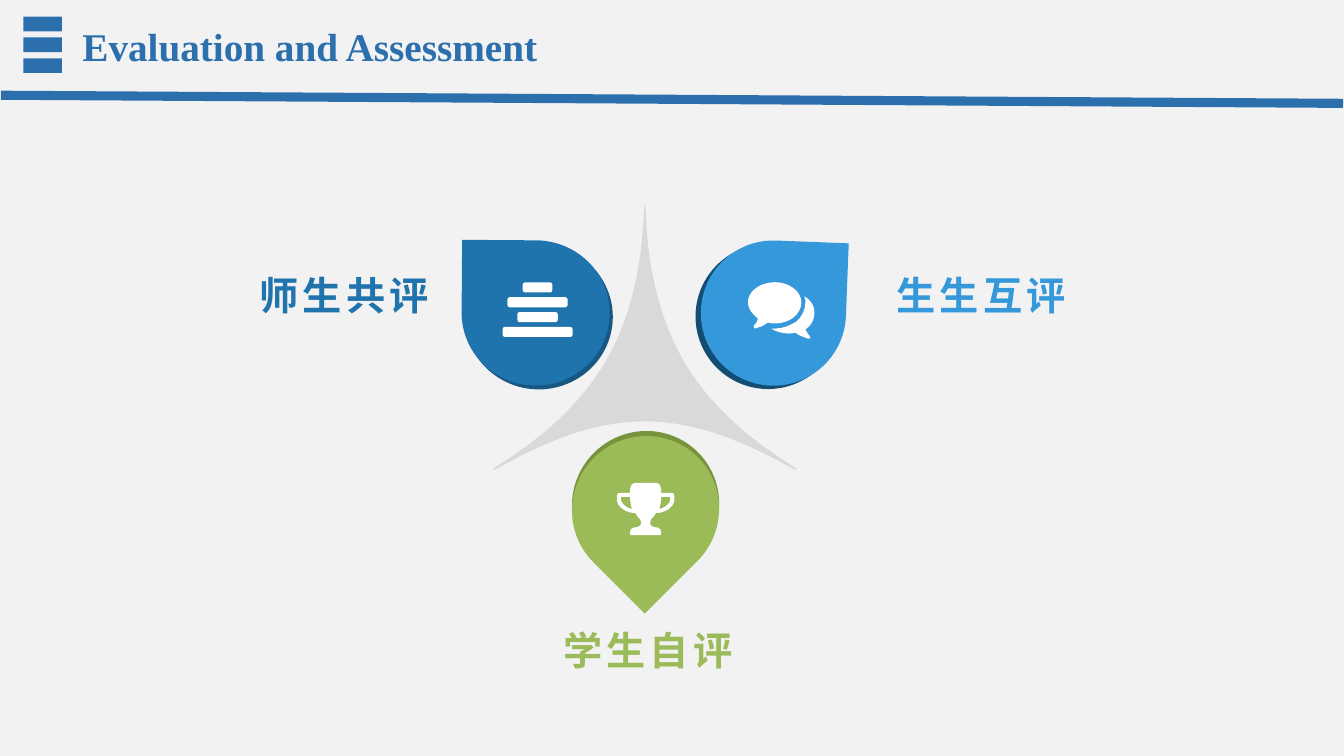
"""Build the "Evaluation and Assessment" slide with three teardrop markers."""
from dataclasses import dataclass

from lxml.etree import SubElement
from pptx import Presentation
from pptx.dml.color import RGBColor
from pptx.enum.shapes import MSO_SHAPE as Shp
from pptx.enum.text import MSO_ANCHOR as Anchor, MSO_AUTO_SIZE as AutoSize, PP_ALIGN as Align
from pptx.oxml.ns import qn
from pptx.util import Pt

Contour = list[tuple[float, ...]]
Box = tuple[float, float, float, float]


@dataclass(frozen=True)
class Theme:
    background: str = "F2F2F2"
    header: str = "2C6FAD"
    star: str = "D9D9D9"
    icon: str = "FFFFFF"
    title_font: str = "Times New Roman"
    label_font: str = "Arial"
    size: float = 28
    spacing: float = 3


@dataclass(frozen=True)
class Marker:
    text: str
    color: str
    shade: str
    size: tuple[float, float]
    front: tuple[float, float]
    back: tuple[float, float]
    rotation: float
    label: Box
    align: Align
    icon: list[Contour]


THEME = Theme()


def mirror(segs: Contour, axis: float) -> Contour:
    """Mirror points (2 numbers) and cubics (6 numbers) in reverse order."""
    out = [segs[-1][-2:]]
    for prev, seg in reversed(list(zip(segs, segs[1:]))):
        out.append(seg[2:4] + seg[:2] + prev[-2:] if len(seg) == 6 else prev[-2:])
    return [tuple(v if i % 2 else 2 * axis - v for i, v in enumerate(seg)) for seg in out]


def symmetric(right_half: Contour, axis: float) -> Contour:
    """Complete a right half with its mirror image."""
    return right_half + mirror(right_half, axis)[1:]


def rounded_bar(cx: float, y: float, w: float, h: float = 7.2, r: float = 1.6) -> Contour:
    """Outline a centred bar with rounded corners."""
    x, b = cx + w / 2, y + h
    half = [(x - r, y), (x - r / 2, y, x, y + r / 2, x, y + r),
            (x, b - r), (x, b - r / 2, x - r / 2, b, x - r, b)]
    return half + [(2 * cx - x + r, b)] + mirror(half, cx)[1:]


STAR = [symmetric([
    (460.7, 146.2), (461.3, 150.5),
    (462.2, 179.3, 467.2, 221.8, 488.8, 258.5),
    (510.4, 295.2, 543.6, 319, 568.1, 334.1),
    (569.2, 335.5), (567.5, 335.5),
    (541.4, 320.8, 503.1, 301, 460.6, 301)], 460.6)]

STACK_ICON = [rounded_bar(384, 201.7 + 10.6 * i, w)
              for i, w in enumerate((21.2, 43, 29, 50))]

CHAT_ICON = [
    [(553.7, 231.1), (551.5, 231.1, 550.1, 230.8, 548.6, 230.4),
     (546.5, 231.8, 544.3, 233.3, 541.4, 234), (540, 234.3, 540, 234.7, 539.3, 234.7),
     (538.6, 234.7, 538.6, 234, 538.6, 234), (537.8, 233.3, 538.6, 232.6, 538.6, 232.6),
     (540, 231.1, 540.7, 230.4, 541.4, 227.5), (537.8, 224.6, 534.2, 221, 534.2, 216),
     (534.2, 208.1, 542.9, 201.6, 553.7, 201.6), (563.8, 201.6, 572.4, 208.1, 572.4, 216),
     (572.4, 224.6, 563.8, 231.1, 553.7, 231.1)],
    [(575.3, 235.4), (576, 237.6, 577.4, 238.3, 578.2, 239.8),
     (578.9, 240.5, 578.9, 240.5, 578.9, 241.2), (578.9, 241.9, 578.9, 241.9, 578.2, 241.9),
     (577.4, 241.9, 576, 241.9, 575.3, 241.2), (573.1, 240.5, 571, 239.8, 568.1, 237.6),
     (566.6, 238, 565.2, 238.3, 563.8, 238.3), (558.7, 238.3, 554.4, 236.9, 550.8, 234.7),
     (551.5, 234.7, 553, 234.7, 553.7, 234.7), (558.7, 234.7, 564.5, 232.6, 568.8, 229.7),
     (573.1, 226.1, 575.3, 221, 575.3, 216), (575.3, 214.6, 575.3, 213.1, 574.6, 211.7),
     (579.6, 214.6, 581.8, 218.9, 581.8, 223.2), (581.8, 228.2, 579.6, 232.6, 575.3, 235.4)]]

CUP_AXIS = 461.2
CUP_HANDLE = [
    (478.8, 355), (472.3, 355), (472.3, 358.6, 471.6, 361.4, 470.9, 363.6),
    (475.2, 362.9, 478.8, 359.3, 478.8, 357.1)]
CUP_ICON = [symmetric([
    (461.2, 344.9), (468, 344.9), (470.9, 344.9, 472.3, 347, 472.3, 349.2), (472.3, 352),
    (478.8, 352), (481, 352, 481.7, 352.2, 481.7, 354.2), (481.7, 357.1),
    (481.7, 361.4, 475.9, 366.5, 468.7, 366.5), (467.3, 367.9, 466.6, 369.4, 466.6, 369.4),
    (465.1, 370.1, 464.4, 371.5, 464.4, 373.7), (464.4, 374.4, 465.1, 376.6, 467.3, 376.6),
    (470.2, 376.6, 472.3, 377.3, 472.3, 380.2), (472.3, 381.6),
    (472.3, 382.3, 471.6, 382.3, 471.6, 382.3), (461.2, 382.3)], CUP_AXIS),
    CUP_HANDLE, mirror(CUP_HANDLE, CUP_AXIS)]

MARKERS = [
    Marker("师生共评", "1F74AD", "175782", (103.7, 105.8), (330.8, 170.6), (333, 173.4),
           270.4, (76.3, 196.2, 236.9, 31), Align.RIGHT, STACK_ICON),
    Marker("生生互评", "3498DB", "144D73", (103.7, 103.7), (500.6, 171.8), (496.8, 174.2),
           2.2, (633.2, 196.2, 141.1, 31), Align.LEFT, CHAT_ICON),
    Marker("学生自评", "9BBB59", "77933C", (105.8, 104.4), (408.2, 311.8), (408.2, 308.2),
           135.1, (395.3, 450, 159.8, 31), Align.LEFT, CUP_ICON)]


def paint(sp, color: str) -> None:
    """Give a shape a flat fill with no line or shadow."""
    sp.shadow.inherit = False
    sp.fill.solid()
    sp.fill.fore_color.rgb = RGBColor.from_string(color)
    sp.line.fill.background()


def add_preset(s, kind: Shp, box: Box, color: str, rotation: float = 0) -> None:
    """Draw a flat preset shape."""
    sp = s.shapes.add_shape(kind, *map(Pt, box))
    sp.rotation = rotation
    paint(sp, color)


def add_outline(s, contours: list[Contour], color: str) -> None:
    """Draw closed contours as one freeform, bending the cubic segments."""
    scaled = [[tuple(map(Pt, seg)) for seg in segs] for segs in contours]
    fb = s.shapes.build_freeform(*scaled[0][0])
    for i, segs in enumerate(scaled):
        if i:
            fb.move_to(*segs[0])
        fb.add_line_segments([seg[-2:] for seg in segs[1:]], close=True)
    sp = fb.convert_to_shape()
    lines = list(sp._element.iter(qn("a:lnTo")))
    for line, seg in zip(lines, (seg for segs in scaled for seg in segs[1:])):
        if len(seg) == 6:
            curve = SubElement(line.getparent(), qn("a:cubicBezTo"))
            for x, y in zip(seg[::2], seg[1::2]):
                SubElement(curve, qn("a:pt"), x=str(x - sp.left), y=str(y - sp.top))
            line.getparent().replace(line, curve)
    paint(sp, color)


def write(sp, text: str, font: str, color: str, insets: Box, anchor: Anchor, align: Align):
    """Set one bold line of text and return its paragraph."""
    tf = sp.text_frame
    tf.text = text
    tf.word_wrap, tf.auto_size, tf.vertical_anchor = True, AutoSize.NONE, anchor
    tf.margin_left, tf.margin_top, tf.margin_right, tf.margin_bottom = map(Pt, insets)
    p = tf.paragraphs[0]
    p.alignment = align
    f = p.runs[0].font
    f.name, f.size, f.bold = font, Pt(THEME.size), True
    f.color.rgb = RGBColor.from_string(color)
    return p


def add_header(s) -> None:
    """Draw the slanted band, the three bars and the title."""
    add_outline(s, [[(0.7, 64.8), (959.5, 70.6), (959.3, 77.1), (0.7, 71.3)]], THEME.header)
    for i in range(3):
        add_preset(s, Shp.RECTANGLE, (16.8, 11.9 + 14.9 * i, 27.5, 10.5), THEME.header)
    sp = s.shapes.title
    sp.left, sp.top, sp.width, sp.height = map(Pt, (51.1, 14.4, 428.4, 34.6))
    p = write(sp, "Evaluation and Assessment", THEME.title_font, THEME.header,
              (7.8, 1.4, 0, 0), Anchor.TOP, Align.LEFT)
    p.space_before = Pt(1)


def add_marker(s, m: Marker) -> None:
    """Draw a teardrop with its shade, icon and label."""
    for corner, color in ((m.back, m.shade), (m.front, m.color)):
        add_preset(s, Shp.TEAR, (*corner, *m.size), color, m.rotation)
    add_outline(s, m.icon, THEME.icon)
    p = write(s.shapes.add_textbox(*map(Pt, m.label)), m.text, THEME.label_font, m.color,
              (7.2, 3.6, 7.2, 0), Anchor.BOTTOM, m.align)
    p.line_spacing = 1.2
    p.runs[0].font._element.set("spc", str(int(THEME.spacing * 100)))


def main() -> None:
    """Build and save the slide."""
    prs = Presentation()
    prs.slide_width, prs.slide_height = Pt(960), Pt(540)
    s = prs.slides.add_slide(prs.slide_layouts[5])
    s.background.fill.solid()
    s.background.fill.fore_color.rgb = RGBColor.from_string(THEME.background)
    add_header(s)
    add_outline(s, STAR, THEME.star)
    for m in MARKERS:
        add_marker(s, m)
    prs.save("out.pptx")


if __name__ == "__main__":
    main()
